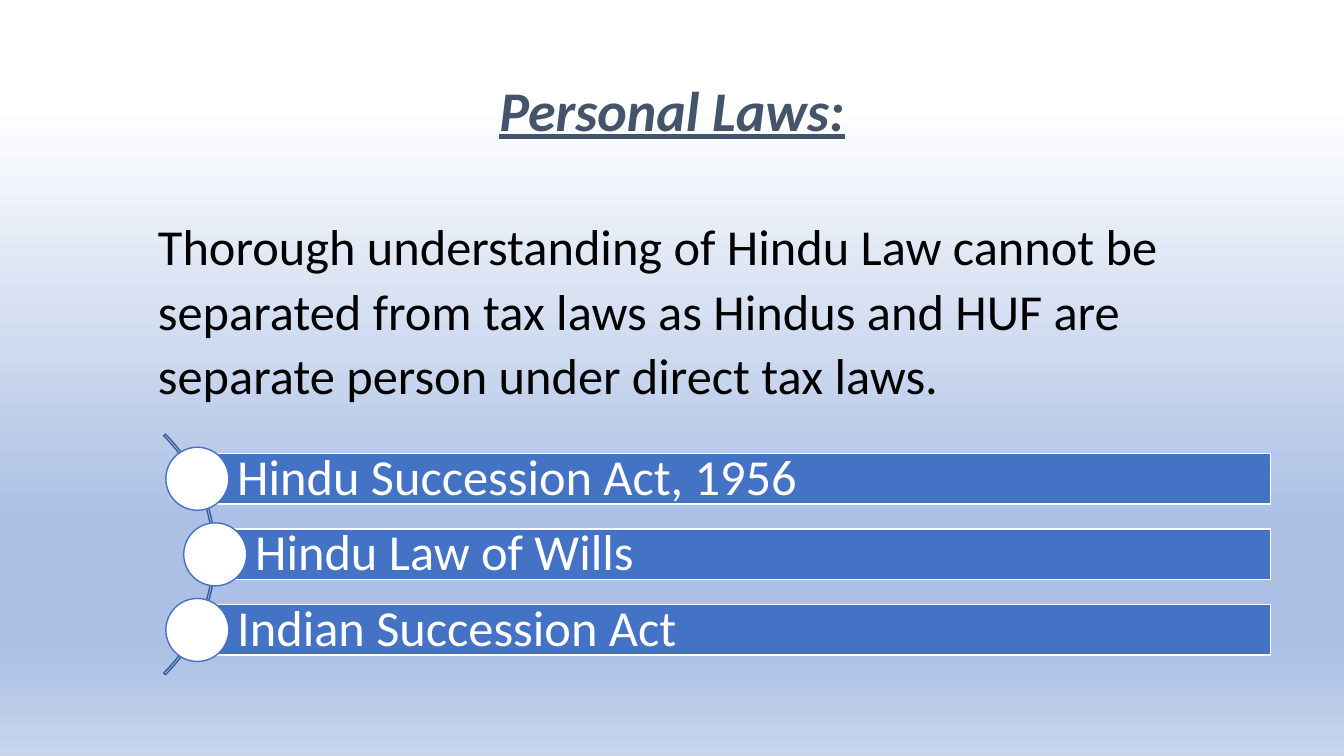
from collections import namedtuple
from dataclasses import dataclass

from lxml.etree import SubElement
from pptx import Presentation
from pptx.dml.color import RGBColor
from pptx.enum.shapes import MSO_SHAPE
from pptx.enum.text import MSO_ANCHOR, PP_ALIGN
from pptx.oxml.ns import qn
from pptx.util import Pt

EMU_PER_PX = 9525
Box = namedtuple("Box", "left top width height")


@dataclass(frozen=True)
class Theme:
    font: str = "Calibri"
    title_size: int = 40
    text_size: int = 36
    title: str = "44546A"
    text: str = "000000"
    light: str = "FFFFFF"
    accent: str = "4472C4"
    arc: str = "365B9D"
    backdrop: tuple = ((14, "FFFFFF"), (69, "ABC0E4"), (85, "ABC0E4"), (100, "C7D5ED"))


THEME = Theme()


def px(length):
    return length * EMU_PER_PX


def emu(box):
    return [px(length) for length in box]


def write(shape, text, size, color, line_spacing):
    frame = shape.text_frame
    frame.word_wrap = True
    frame.text = text
    para = frame.paragraphs[0]
    para.line_spacing = line_spacing
    font = para.runs[0].font
    font.name = THEME.font
    font.size = Pt(size)
    font.color.rgb = RGBColor.from_string(color)
    return para


def add_outlined(shapes, kind, box, line, fill=None):
    shape = shapes.add_shape(kind, *emu(box))
    shape.shadow.inherit = False
    if fill:
        shape.fill.solid()
        shape.fill.fore_color.rgb = RGBColor.from_string(fill)
    else:
        shape.fill.background()
    shape.line.color.rgb = RGBColor.from_string(line)
    shape.line.width = Pt(1)
    return shape


def paint_background(page):
    fill = page.background.fill
    fill.gradient()
    fill.gradient_angle = 270
    stops = page.element.find(".//" + qn("a:gsLst"))
    for stop in list(stops):
        stops.remove(stop)
    for position, color in THEME.backdrop:
        stop = SubElement(stops, qn("a:gs"), pos=str(position * 1000))
        SubElement(stop, qn("a:srgbClr"), val=color)


def set_title(page, box, text):
    title = page.shapes.title
    title.left, title.top, title.width, title.height = emu(box)
    title.text_frame.vertical_anchor = MSO_ANCHOR.MIDDLE
    para = write(title, text, THEME.title_size, THEME.title, 0.9)
    para.alignment = PP_ALIGN.CENTER
    font = para.runs[0].font
    font.bold = font.italic = font.underline = True


def add_statement(page, box, text):
    statement = page.shapes.add_textbox(*emu(box))
    para = write(statement, text, THEME.text_size, THEME.text, 1.07)
    para.space_after = Pt(8)


def add_law(shapes, box, text):
    bar = add_outlined(shapes, MSO_SHAPE.RECTANGLE, box, THEME.light, THEME.accent)
    frame = bar.text_frame
    frame.vertical_anchor = MSO_ANCHOR.MIDDLE
    frame.margin_left = px(38)
    frame.margin_top = frame.margin_right = frame.margin_bottom = px(10)
    para = write(bar, text, THEME.text_size, THEME.light, 0.9)
    para.alignment = PP_ALIGN.LEFT

    diameter = 60
    dot = Box(box.left - diameter // 2, box.top + (box.height - diameter) // 2, diameter, diameter)
    add_outlined(shapes, MSO_SHAPE.OVAL, dot, THEME.accent, THEME.light)


def add_law_list(page, box, laws):
    shapes = page.shapes.add_group_shape().shapes
    size = 324
    middle = box.top + box.height // 2
    arc_box = Box(box.left + 17 - size, middle - size // 2, size, size)
    arc = add_outlined(shapes, MSO_SHAPE.BLOCK_ARC, arc_box, THEME.arc)
    for index, value in enumerate((189, 27, 0.007)):
        arc.adjustments[index] = value

    bar_height = 48
    pitch = (box.height - bar_height) // (len(laws) - 1)
    for index, law in enumerate(laws):
        indent = 17 * (index % 2)
        bar = Box(box.left + indent, box.top + index * pitch, box.width - indent, bar_height)
        add_law(shapes, bar, law)


def main():
    deck = Presentation()
    deck.slide_width, deck.slide_height = px(1280), px(720)
    page = deck.slides.add_slide(deck.slide_layouts[5])
    paint_background(page)
    set_title(page, Box(88, 38, 1104, 139), "Personal Laws:")
    add_law_list(
        page,
        Box(188, 432, 1022, 192),
        ("Hindu Succession Act, 1956", "Hindu Law of Wills", "Indian Succession Act"),
    )
    add_statement(
        page,
        Box(141, 196, 1072, 194),
        "Thorough understanding of Hindu Law cannot be separated from tax laws "
        "as Hindus and HUF are separate person under direct tax laws.",
    )
    deck.save("out.pptx")


if __name__ == "__main__":
    main()
